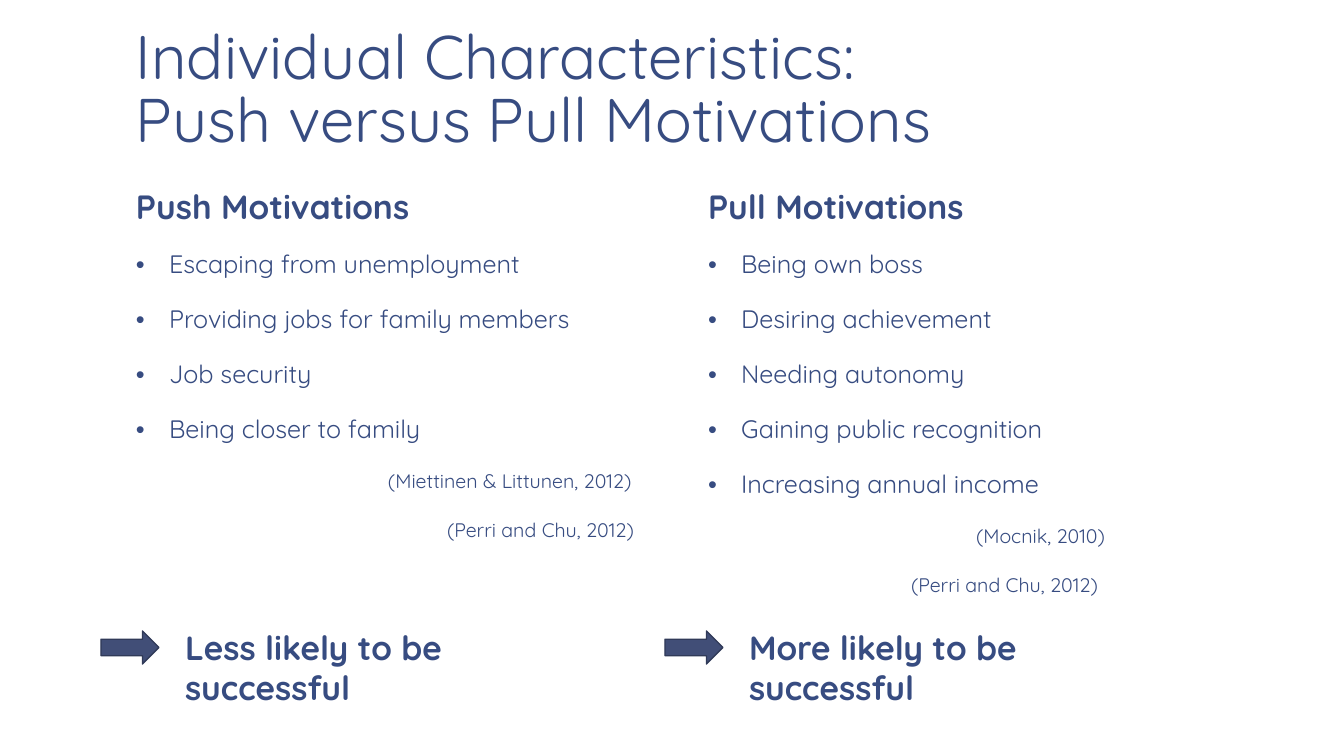
from lxml import etree
from pptx import Presentation, util as u
from pptx.dml.color import RGBColor
from pptx.enum import shapes, text
from pptx.oxml.ns import qn

# Content: citations carry their indent in px
TITLE = "Individual Characteristics:\vPush versus Pull Motivations"
COLUMNS = [
    {"heading": "Push Motivations",
     "points": ["Escaping from unemployment", "Providing jobs for family members",
                "Job security", "Being closer to family"],
     "citations": [("(Miettinen & Littunen, 2012)", 252), ("(Perri and Chu, 2012)", 311)],
     "outcome": "Less likely to be successful"},
    {"heading": "Pull Motivations",
     "points": ["Being own boss", "Desiring achievement", "Needing autonomy",
                "Gaining public recognition", "Increasing annual income"],
     "citations": [("(Mocnik, 2010)", 268), ("(Perri and Chu, 2012)", 203)],
     "outcome": "More likely to be successful"},
]

# Style
FONT = "Quicksand"
NAVY = RGBColor(0x37, 0x4C, 0x81)
ARROW_FILL = RGBColor(0x41, 0x4E, 0x77)
ARROW_LINE = RGBColor(0x30, 0x3A, 0x58)

# Layout in px
COLUMN_LEFTS = [123, 695]
OUTCOME_LEFTS = [101, 665]
COLUMN_W = 548
BULLET_INDENT = 33


def px(n):
    return u.Emu(round(n * 914400 / 100.8))


prs = Presentation()
prs.slide_width, prs.slide_height = px(1344), px(756)
slide = prs.slides.add_slide(prs.slide_layouts[6])


def add_box(left, top, width, height, anchor=text.MSO_ANCHOR.TOP, inset=(13, 7)):
    tf = slide.shapes.add_textbox(px(left), px(top), px(width), px(height)).text_frame
    tf.word_wrap = True
    tf.vertical_anchor = anchor
    tf.margin_left = tf.margin_right = px(inset[0])
    tf.margin_top = tf.margin_bottom = px(inset[1])
    return tf


def add_text(tf, words, size, bold=False, spacing=0.95, before=18.7, indent=0, bullet=False):
    first = not tf.paragraphs[0].runs
    p = tf.paragraphs[0] if first else tf.add_paragraph()
    p.text = words
    pPr = p._p.get_or_add_pPr()
    if indent:
        pPr.set("marL", str(px(indent)))
    if bullet:
        pPr.set("indent", str(-px(indent)))
        etree.SubElement(pPr, qn("a:buFont")).set("typeface", "Arial")
        etree.SubElement(pPr, qn("a:buChar")).set("char", "•")
    p.line_spacing = spacing
    if not first:
        p.space_before = u.Pt(before)
    for r in p.runs:
        r.font.name, r.font.size, r.font.bold = FONT, u.Pt(size), bold
        r.font.color.rgb = NAVY


# Title
add_text(add_box(123, 8, 1120, 154, text.MSO_ANCHOR.BOTTOM), TITLE, 44, spacing=0.85)

for column, left, outcome_left in zip(COLUMNS, COLUMN_LEFTS, OUTCOME_LEFTS):
    # Heading
    add_text(add_box(left, 177, COLUMN_W, 57, text.MSO_ANCHOR.BOTTOM),
             column["heading"], 24, bold=True)

    # Motivations and citations
    tf = add_box(left, 244, COLUMN_W, 436)
    for point in column["points"]:
        add_text(tf, point, 18, indent=BULLET_INDENT, bullet=True)
    for citation, indent in column["citations"]:
        add_text(tf, citation, 14, indent=indent)

    # Outcome with arrow
    sp = slide.shapes.add_shape(shapes.MSO_SHAPE.RIGHT_ARROW, px(outcome_left), px(631),
                                px(58), px(33))
    sp.shadow.inherit = False
    sp.fill.solid()
    sp.fill.fore_color.rgb = ARROW_FILL
    sp.line.color.rgb = ARROW_LINE
    sp.line.width = u.Pt(1)
    add_text(add_box(outcome_left + 74, 622, 420, 92, inset=(10, 5)),
             column["outcome"], 24, bold=True, spacing=1.0)

prs.save("out.pptx")
